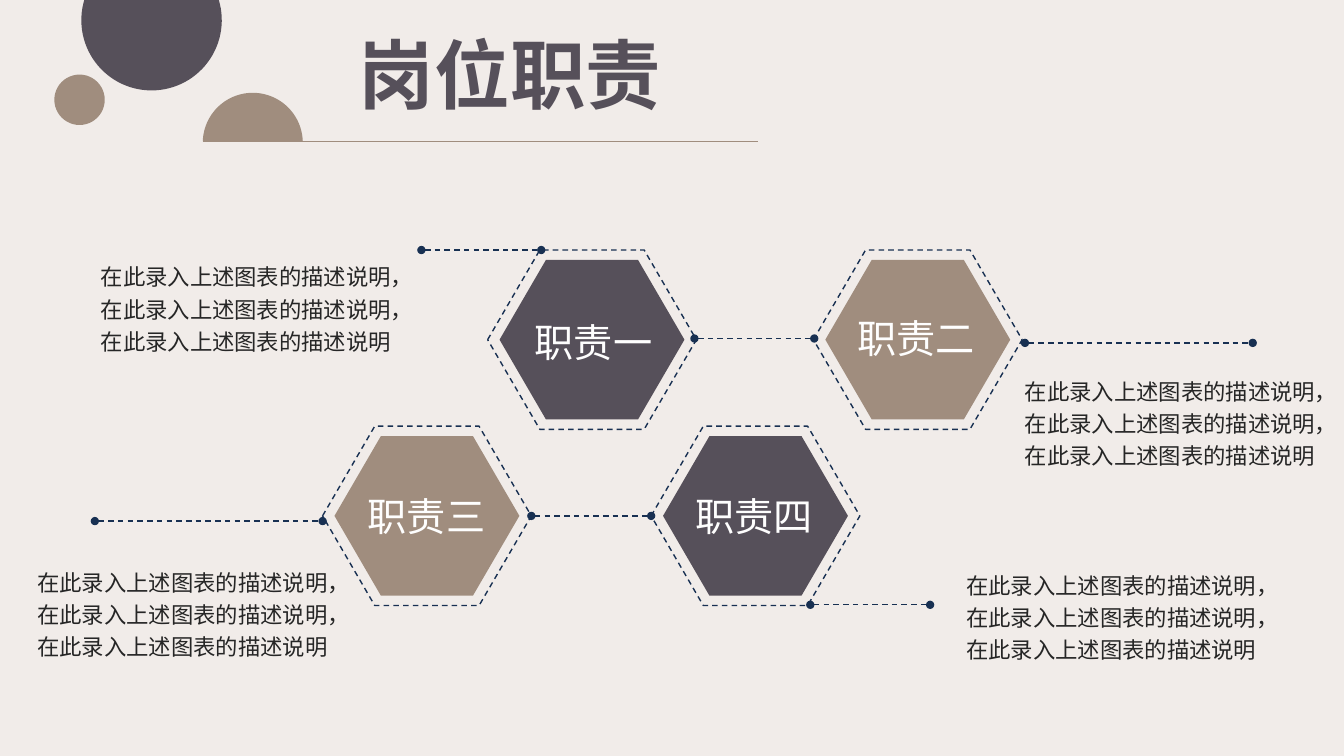
import math
from dataclasses import dataclass

import lxml.etree
import pptx
import pptx.dml.color
import pptx.enum.dml
import pptx.enum.shapes
import pptx.enum.text
import pptx.oxml.ns
import pptx.util

Cm = pptx.util.Cm
Pt = pptx.util.Pt
MSO_SHAPE = pptx.enum.shapes.MSO_SHAPE
qn = pptx.oxml.ns.qn

FONT = "Noto Sans CJK SC"
PLUM, TAN, NAVY = "56505A", "A08D7E", "183052"
BACKGROUND, WHITE, INK = "F1ECE9", "FEFEFE", "262626"
HEX_W, HEX_H = 5.26, 4.52
INSET_X, INSET_Y = 0.3, 0.25
DESCRIPTION = "，".join(["在此录入上述图表的描述说明"] * 3)

TITLE_FORMAT = {"size": Pt(54), "bold": True}
LABEL_FORMAT = {"size": Pt(28)}
BODY_FORMAT = {"size": Pt(16)}


@dataclass
class Duty:
    label: str
    x: float
    y: float
    color: str
    label_x: float
    label_y: float
    text_x: float
    text_y: float


@dataclass
class Link:
    x1: float
    x2: float
    y: float


@dataclass
class Dome:
    cx: float
    cy: float
    r: float
    start: float
    end: float
    color: str


DUTIES = [
    Duty("职责一", 12.29, 6.3, PLUM, 13.23, 7.9, 2.29, 6.38),
    Duty("职责二", 20.5, 6.3, TAN, 21.36, 7.8, 25.58, 9.27),
    Duty("职责三", 8.13, 10.74, TAN, 9.02, 12.27, 0.69, 14.07),
    Duty("职责四", 16.41, 10.74, PLUM, 17.27, 12.27, 24.1, 14.15),
]
LINKS = [
    Link(17.5, 20.52, 8.53),
    Link(13.39, 16.41, 13),
    Link(10.62, 13.64, 6.3),
    Link(2.39, 8.13, 13.13),
    Link(25.83, 31.57, 8.64),
    Link(20.42, 23.44, 15.24),
]
DOMES = [
    Dome(3.82, 0.51, 1.77, -16.75, 196.75, PLUM),
    Dome(6.37, 3.6, 1.26, 181.82, 358.18, TAN),
]


def rgb(value: str) -> pptx.dml.color.RGBColor:
    return pptx.dml.color.RGBColor.from_string(value)


def fill_plain(sp, color: str) -> None:
    sp.shadow.inherit = False
    sp.fill.solid()
    sp.fill.fore_color.rgb = rgb(color)
    sp.line.fill.background()


def draw_dome(shapes, dome: Dome) -> None:
    steps = 60
    angles = [math.radians(dome.start + (dome.end - dome.start) * i / steps)
              for i in range(steps + 1)]
    points = [(Cm(dome.cx + dome.r * math.cos(a)), Cm(dome.cy + dome.r * math.sin(a)))
              for a in angles]
    builder = shapes.build_freeform(*points[0], scale=1.0)
    builder.add_line_segments(points[1:], close=True)
    fill_plain(builder.convert_to_shape(), dome.color)


def write(sp, text: str, fmt: dict, color: str, wrap: bool, spacing: float = 1.0) -> None:
    tf = sp.text_frame
    tf.word_wrap = wrap
    tf.auto_size = pptx.enum.text.MSO_AUTO_SIZE.SHAPE_TO_FIT_TEXT
    tf.vertical_anchor = pptx.enum.text.MSO_ANCHOR.TOP
    p = tf.paragraphs[0]
    p.alignment = pptx.enum.text.PP_ALIGN.LEFT
    p.line_spacing = spacing
    r = p.add_run()
    r.text = text
    for name, value in {"name": FONT, **fmt}.items():
        setattr(r.font, name, value)
    r.font.color.rgb = rgb(color)
    lxml.etree.SubElement(r.font._element, qn("a:ea"), typeface=FONT)


def add_text(shapes, x: float, y: float, w: float, h: float):
    return shapes.add_textbox(Cm(x), Cm(y), Cm(w), Cm(h))


def add_hexagon(shapes, x: float, y: float, w: float, h: float):
    sp = shapes.add_shape(MSO_SHAPE.HEXAGON, Cm(x), Cm(y), Cm(w), Cm(h))
    sp.adjustments[0] = 0.291
    sp.adjustments[1] = 1.155
    return sp


def dash_line(sp) -> None:
    sp.line.color.rgb = rgb(NAVY)
    sp.line.width = Pt(1)
    sp.line.dash_style = pptx.enum.dml.MSO_LINE.DASH


def add_line(shapes, x1: float, x2: float, y: float):
    line = shapes.add_connector(pptx.enum.shapes.MSO_CONNECTOR.STRAIGHT,
                                Cm(x1), Cm(y), Cm(x2), Cm(y))
    line.line.color.rgb = rgb(TAN)
    line.line.width = Pt(0.5)
    lxml.etree.SubElement(line._element.spPr, qn("a:effectLst"))
    return line


def draw_link(shapes, link: Link) -> None:
    line = add_line(shapes, link.x1, link.x2, link.y)
    dash_line(line)
    ln = line.line._get_or_add_ln()
    for end in ("a:headEnd", "a:tailEnd"):
        lxml.etree.SubElement(ln, qn(end), type="oval")


def draw_outline(shapes, duty: Duty) -> None:
    sp = add_hexagon(shapes, duty.x, duty.y, HEX_W, HEX_H)
    sp.shadow.inherit = False
    sp.fill.background()
    dash_line(sp)


def draw_duty(shapes, duty: Duty) -> None:
    group = shapes.add_group_shape().shapes
    sp = add_hexagon(group, duty.x + INSET_X, duty.y + INSET_Y,
                     HEX_W - 2 * INSET_X, HEX_H - 2 * INSET_Y)
    fill_plain(sp, duty.color)
    label = add_text(group, duty.label_x, duty.label_y, 3.5, 1.45)
    write(label, duty.label, LABEL_FORMAT, WHITE, wrap=False)


def main() -> None:
    prs = pptx.Presentation()
    prs.slide_width, prs.slide_height = Cm(33.87), Cm(19.05)
    s = prs.slides.add_slide(prs.slide_layouts[5])
    s.background.fill.solid()
    s.background.fill.fore_color.rgb = rgb(BACKGROUND)

    title = s.shapes.title
    place = {"left": 8.79, "top": 0.58, "width": 8.26, "height": 2.57}
    for name, value in place.items():
        setattr(title, name, Cm(value))
    write(title, "岗位职责", TITLE_FORMAT, PLUM, wrap=False)

    for dome in DOMES:
        draw_dome(s.shapes, dome)
    dot = s.shapes.add_shape(MSO_SHAPE.OVAL, Cm(1.37), Cm(1.88), Cm(1.27), Cm(1.27))
    fill_plain(dot, TAN)
    add_line(s.shapes, 5.11, 19.1, 3.56)

    for duty in DUTIES:
        draw_outline(s.shapes, duty)
    for link in LINKS:
        draw_link(s.shapes, link)
    for duty in DUTIES:
        draw_duty(s.shapes, duty)
    for duty in DUTIES:
        box = add_text(s.shapes, duty.text_x, duty.text_y, 7.85, 2.72)
        write(box, DESCRIPTION, BODY_FORMAT, INK, wrap=True, spacing=1.2)

    prs.save("out.pptx")


if __name__ == "__main__":
    main()
